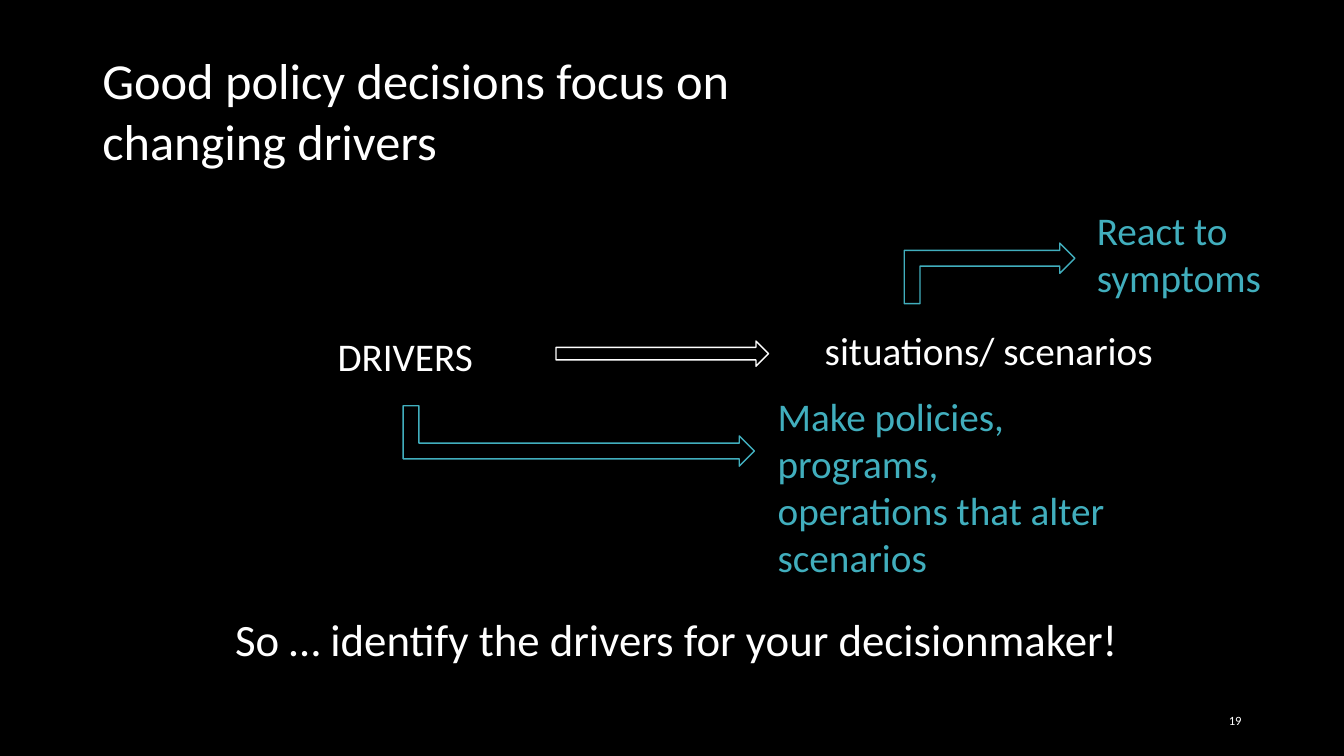
from dataclasses import dataclass

from pptx import Presentation
from pptx.dml.color import RGBColor
from pptx.enum.shapes import MSO_SHAPE
from pptx.enum.text import MSO_ANCHOR, PP_ALIGN
from pptx.util import Inches, Pt

WIDTH, HEIGHT = Inches(13.33), Inches(7.5)
COLUMNS, ROWS = 160, 90
WHITE, TEAL, BLACK = "FFFFFF", "41AEBD", "000000"
FONT = "Calibri"


@dataclass
class Box:
    col: float
    row: float
    cols: float
    rows: float

    def emu(self) -> tuple[int, int, int, int]:
        return (
            round(WIDTH * self.col / COLUMNS),
            round(HEIGHT * self.row / ROWS),
            round(WIDTH * self.cols / COLUMNS),
            round(HEIGHT * self.rows / ROWS),
        )


@dataclass
class Label:
    box: Box
    lines: list[str]
    size: int = 28
    color: str = WHITE
    align: PP_ALIGN = PP_ALIGN.LEFT
    anchor: MSO_ANCHOR = MSO_ANCHOR.TOP


@dataclass
class Arrow:
    box: Box
    shape: MSO_SHAPE
    color: str
    rotation: int = 0
    flipped: bool = False
    adjustments: tuple[float, ...] = ()


BENDS = (0.26, 0.25, 0.25)

LABELS = [
    Label(Box(11, 5.3, 87, 15.7), ["Good policy decisions focus on changing drivers"], size=36),
    Label(Box(39, 39, 30.7, 6.8), ["DRIVERS"]),
    Label(Box(97, 38.3, 49.1, 6.8), ["situations/ scenarios"]),
    Label(
        Box(91.4, 46.1, 49.9, 23.9),
        ["Make policies,", "programs,", "operations that alter scenarios"],
        color=TEAL,
    ),
    Label(Box(129.4, 24, 30.7, 12.5), ["React to symptoms"], color=TEAL),
    Label(Box(26.8, 72.2, 126, 7.7), ["So … identify the drivers for your decisionmaker!"], size=32),
    Label(Box(113, 83.4, 36, 4.8), ["19"], size=9, align=PP_ALIGN.RIGHT, anchor=MSO_ANCHOR.MIDDLE),
]

ARROWS = [
    Arrow(Box(66.2, 40.6, 25.3, 3), MSO_SHAPE.RIGHT_ARROW, WHITE),
    Arrow(Box(65.3, 31, 7.2, 41.8), MSO_SHAPE.BENT_UP_ARROW, TEAL, 90, False, BENDS),
    Arrow(Box(114.2, 22.4, 7.2, 20.3), MSO_SHAPE.BENT_UP_ARROW, TEAL, 270, True, BENDS),
]


def rgb(color: str) -> RGBColor:
    return RGBColor.from_string(color)


def add_text(slide, box: Box, lines: list[str], *, size: int, color: str,
             align: PP_ALIGN, anchor: MSO_ANCHOR) -> None:
    tf = slide.shapes.add_textbox(*box.emu()).text_frame
    tf.word_wrap = True
    tf.vertical_anchor = anchor
    for i, line in enumerate(lines):
        p = tf.add_paragraph() if i else tf.paragraphs[0]
        p.alignment = align
        r = p.add_run()
        r.text = line
        r.font.name = FONT
        r.font.size = Pt(size)
        r.font.color.rgb = rgb(color)


def add_arrow(slide, arrow: Arrow) -> None:
    sp = slide.shapes.add_shape(arrow.shape, *arrow.box.emu())
    sp.shadow.inherit = False
    sp.fill.background()
    sp.line.color.rgb = rgb(arrow.color)
    sp.line.width = Pt(1)
    sp.rotation = arrow.rotation
    for i, value in enumerate(arrow.adjustments):
        sp.adjustments[i] = value
    if arrow.flipped:
        sp.element.spPr.get_or_add_xfrm().set("flipV", "1")


def main() -> None:
    prs = Presentation()
    prs.slide_width, prs.slide_height = WIDTH, HEIGHT
    s = prs.slides.add_slide(prs.slide_layouts[6])
    s.background.fill.solid()
    s.background.fill.fore_color.rgb = rgb(BLACK)
    for arrow in ARROWS:
        add_arrow(s, arrow)
    for label in LABELS:
        add_text(s, label.box, label.lines, size=label.size, color=label.color,
                 align=label.align, anchor=label.anchor)
    prs.save("out.pptx")


if __name__ == "__main__":
    main()
